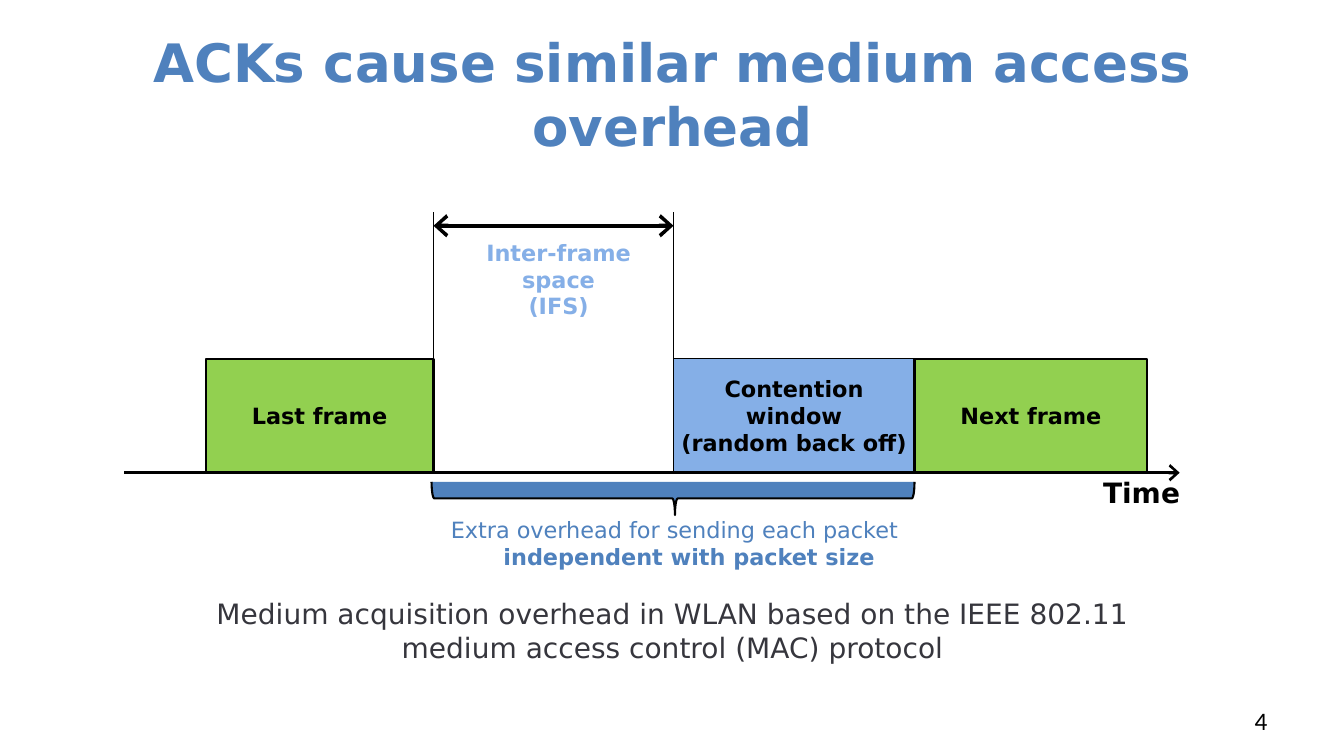
from dataclasses import dataclass

from lxml import etree
from pptx import Presentation
from pptx import util as u
from pptx.dml.color import RGBColor
from pptx.enum import shapes, text
from pptx.oxml.ns import qn


@dataclass(frozen=True)
class Theme:
    font: str = "DejaVu Sans"
    number_font: str = "Calibri"
    blue: str = "4F81BD"
    light_blue: str = "85AFE7"
    green: str = "92D050"
    black: str = "000000"
    grey: str = "36363D"
    title: float = 37.8
    body: float = 20
    label: float = 16
    number: float = 18


T = Theme()
CENTER, RIGHT = text.PP_ALIGN.CENTER, text.PP_ALIGN.RIGHT


@dataclass(frozen=True)
class Block:
    left: float
    right: float
    fill: str
    weight: float
    lines: tuple[str, ...]


@dataclass(frozen=True)
class Label:
    left: float
    top: float
    width: float
    height: float
    lines: tuple[str, ...]
    color: str
    size: float = T.label
    bold: bool = True
    align: text.PP_ALIGN = CENTER
    font: str = T.font


@dataclass(frozen=True)
class Rule:
    x1: float
    y1: float
    x2: float
    y2: float
    weight: float
    heads: tuple[str, ...] = ()


LAST_START, IFS_START, IFS_END, NEXT_START, NEXT_END = 2.04, 4.3, 6.68, 9.07, 11.38
FRAME_TOP, FRAME_BOTTOM, AXIS_Y = 3.56, 4.68, 4.69
GUIDE_TOP, SPAN_Y = 2.1, 2.24
BRACE_LEFT, BRACE_TOP, BRACE_DEPTH = 4.28, 4.78, 0.33

BLOCKS = [
    Block(LAST_START, IFS_START, T.green, 1.5, ("Last frame",)),
    Block(IFS_END, NEXT_START, T.light_blue, 0.75,
          ("Contention window", "(random back off)")),
    Block(NEXT_START, NEXT_END, T.green, 1.5, ("Next frame",)),
]
RULES = [
    Rule(IFS_START, FRAME_TOP, IFS_START, GUIDE_TOP, 0.75),
    Rule(IFS_END, FRAME_TOP, IFS_END, GUIDE_TOP, 0.75),
    Rule(IFS_START, SPAN_Y, IFS_END, SPAN_Y, 3, ("headEnd", "tailEnd")),
    Rule(1.23, AXIS_Y, 11.7, AXIS_Y, 2.25, ("tailEnd",)),
]
LABELS = [
    Label(10.94, 4.72, 0.89, 0.35, ("Time",), T.black, T.body,
          align=text.PP_ALIGN.LEFT),
    Label(4.48, 2.37, 2.12, 0.84, ("Inter-frame space", "(IFS)"), T.light_blue),
    Label(4.05, 5.12, 5.28, 0.33, ("Extra overhead for sending each packet",),
          T.blue, bold=False),
    Label(4.59, 5.39, 4.49, 0.3, ("independent with packet size",), T.blue),
    Label(1.67, 5.92, 10, 0.84,
          ("Medium acquisition overhead in WLAN based on the IEEE 802.11 "
           "medium access control (MAC) protocol",), T.grey, T.body, False),
    Label(9.66, 7, 2.91, 0.3, ("4",), T.black, T.number, False, RIGHT,
          T.number_font),
]


def write(tf, lines: tuple[str, ...], size: float, color: str, bold: bool = True,
          align: text.PP_ALIGN = CENTER, font: str = T.font) -> None:
    tf.word_wrap = True
    tf.auto_size = text.MSO_AUTO_SIZE.NONE
    tf.margin_left = tf.margin_right = tf.margin_top = tf.margin_bottom = 0
    for i, line in enumerate(lines):
        p = tf.paragraphs[0] if i == 0 else tf.add_paragraph()
        p.text = line
        p.alignment = align
        p.font.name = font
        p.font.size = u.Pt(size)
        p.font.bold = bold
        p.font.color.rgb = RGBColor.from_string(color)


def paint(sp, fill: str, weight: float) -> None:
    sp.shadow.inherit = False
    sp.fill.solid()
    sp.fill.fore_color.rgb = RGBColor.from_string(fill)
    sp.line.color.rgb = RGBColor.from_string(T.black)
    sp.line.width = u.Pt(weight)


def add_block(s, b: Block) -> None:
    sp = s.shapes.add_shape(
        shapes.MSO_SHAPE.RECTANGLE, u.Inches(b.left), u.Inches(FRAME_TOP),
        u.Inches(b.right - b.left), u.Inches(FRAME_BOTTOM - FRAME_TOP))
    paint(sp, b.fill, b.weight)
    write(sp.text_frame, b.lines, T.label, T.black)
    sp.text_frame.vertical_anchor = text.MSO_ANCHOR.MIDDLE


def add_rule(s, rule: Rule) -> None:
    cx = s.shapes.add_connector(
        shapes.MSO_CONNECTOR.STRAIGHT, u.Inches(rule.x1), u.Inches(rule.y1),
        u.Inches(rule.x2), u.Inches(rule.y2))
    cx.line.color.rgb = RGBColor.from_string(T.black)
    cx.line.width = u.Pt(rule.weight)
    ln = cx.line._get_or_add_ln()
    for head in rule.heads:
        etree.SubElement(ln, qn(f"a:{head}"), type="arrow", w="lg", len="med")
    etree.SubElement(cx._element.spPr, qn("a:effectLst"))


def add_label(s, label: Label) -> None:
    sp = s.shapes.add_textbox(u.Inches(label.left), u.Inches(label.top),
                              u.Inches(label.width), u.Inches(label.height))
    write(sp.text_frame, label.lines, label.size, label.color, label.bold,
          label.align, label.font)


def add_brace(s) -> None:
    span = NEXT_START - BRACE_LEFT
    shift = (span - BRACE_DEPTH) / 2
    sp = s.shapes.add_shape(
        shapes.MSO_SHAPE.RIGHT_BRACE, u.Inches(BRACE_LEFT + shift),
        u.Inches(BRACE_TOP - shift), u.Inches(BRACE_DEPTH), u.Inches(span))
    sp.rotation = 90
    sp.adjustments[0], sp.adjustments[1] = 0.083, 0.496
    paint(sp, T.blue, 1.5)


def add_title(s) -> None:
    sp = s.shapes.title
    sp.left, sp.top = u.Inches(0.67), u.Inches(0.3)
    sp.width, sp.height = u.Inches(12), u.Inches(1.25)
    write(sp.text_frame, ("ACKs cause similar medium access overhead",),
          T.title, T.blue)
    sp.text_frame.vertical_anchor = text.MSO_ANCHOR.MIDDLE
    sp.text_frame.margin_left = sp.text_frame.margin_right = u.Inches(0.1)


def main() -> None:
    prs = Presentation()
    prs.slide_width, prs.slide_height = u.Inches(13.33), u.Inches(7.5)
    s = prs.slides.add_slide(prs.slide_layouts[5])
    add_title(s)
    for block in BLOCKS:
        add_block(s, block)
    for rule in RULES:
        add_rule(s, rule)
    add_brace(s)
    for label in LABELS:
        add_label(s, label)
    prs.save("out.pptx")


if __name__ == "__main__":
    main()
